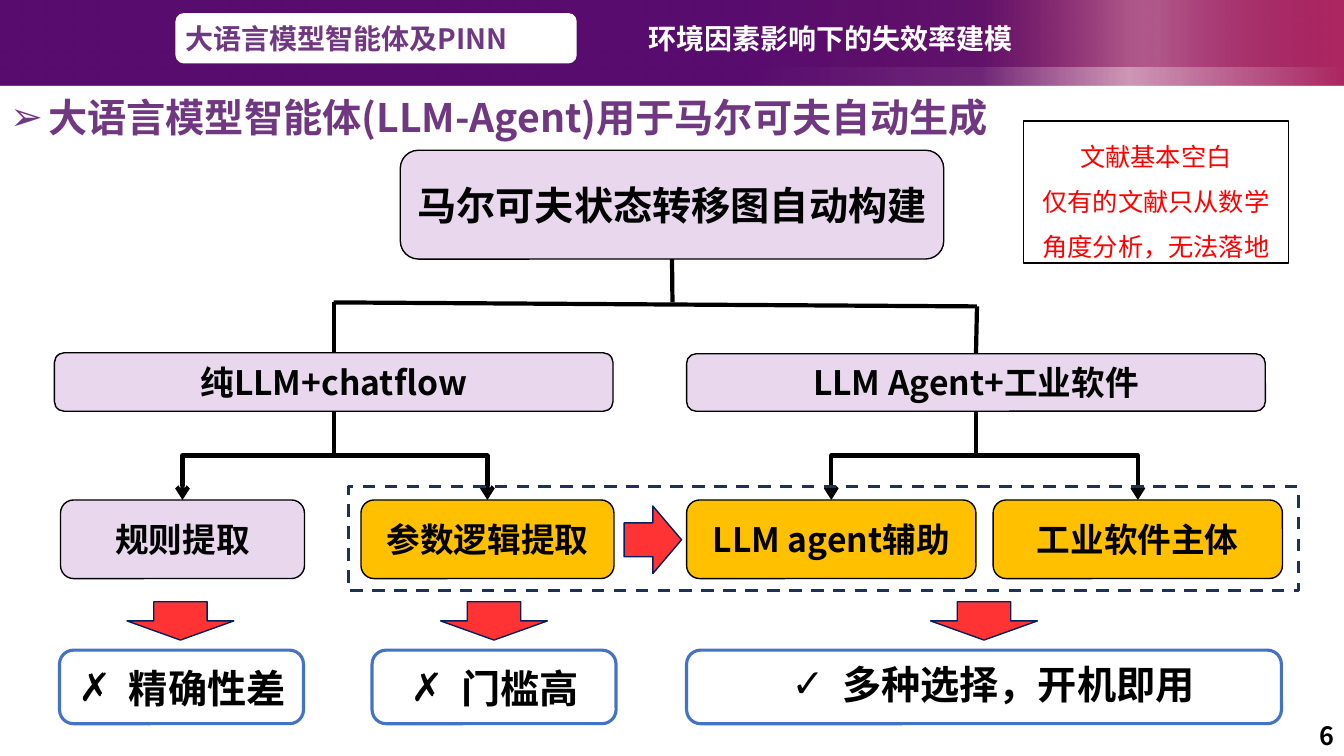
from lxml import etree
from pptx import Presentation, util as u
from pptx.dml.color import RGBColor
from pptx.enum import dml, shapes, text
from pptx.oxml.ns import qn

BLACK = RGBColor(0x00, 0x00, 0x00)
WHITE = RGBColor(0xFF, 0xFF, 0xFF)
RED = RGBColor(0xFF, 0x00, 0x00)
PURPLE = RGBColor(0x70, 0x38, 0x81)
LILAC = RGBColor(0xE8, 0xD7, 0xED)
AMBER = RGBColor(0xFF, 0xC0, 0x00)
BLUE = RGBColor(0x44, 0x72, 0xC4)
NAVY = RGBColor(0x00, 0x20, 0x60)
FRAME = RGBColor(0x1E, 0x32, 0x56)
PLUM = RGBColor(0x58, 0x0C, 0x6E)
MULBERRY = RGBColor(0x69, 0x22, 0x66)
GRAPE = RGBColor(0x61, 0x10, 0x6A)
WINE = RGBColor(0x95, 0x20, 0x64)
ROSE = RGBColor(0xAC, 0x27, 0x61)
CJK = "Noto Sans CJK SC"
KIND = shapes.MSO_SHAPE
ALIGN = text.PP_ALIGN
ANCHOR = text.MSO_ANCHOR

prs = Presentation()
prs.slide_width, prs.slide_height = u.Inches(13.33), u.Inches(7.5)
COL, ROW = prs.slide_width / 133.3, prs.slide_height / 75
slide = prs.slides.add_slide(prs.slide_layouts[5])


def block(parent, kind, at, fill=None, line=None, weight=1):
    x, y, w, h = at
    cells = [round(v) for v in (x * COL, y * ROW, w * COL, h * ROW)]
    if kind is None:
        return parent.add_textbox(*cells)
    s = parent.add_shape(kind, *cells)
    s.shadow.inherit = False
    if fill is None:
        s.fill.background()
    else:
        s.fill.solid()
        s.fill.fore_color.rgb = fill
    if line is None:
        s.line.fill.background()
    else:
        s.line.color.rgb = line
        s.line.width = u.Pt(weight)
    return s


def write(s, words, size, color=BLACK, align=ALIGN.CENTER, anchor=ANCHOR.TOP,
          font=CJK, bold=True, mark=None, indent=0.5, spacing=None):
    tf = s.text_frame
    frame_format = {"word_wrap": True, "vertical_anchor": anchor,
                    "auto_size": text.MSO_AUTO_SIZE.NONE}
    for name, value in frame_format.items():
        setattr(tf, name, value)
    for i, line in enumerate(words.split("\n")):
        p = tf.add_paragraph() if i else tf.paragraphs[0]
        p.alignment, p.line_spacing = align, spacing
        if mark:
            pPr = p._p.get_or_add_pPr()
            pPr.set("marL", str(u.Inches(indent)))
            pPr.set("indent", str(-u.Inches(indent)))
            etree.SubElement(pPr, qn("a:buFont")).set("typeface", "Arial")
            etree.SubElement(pPr, qn("a:buChar")).set("char", mark)
        r = p.add_run()
        r.text = line
        for name, value in {"size": u.Pt(size), "bold": bold, "name": font}.items():
            setattr(r.font, name, value)
        r.font.color.rgb = color
        etree.SubElement(r._r.get_or_add_rPr(), qn("a:ea")).set("typeface", CJK)


banners = [
    (6.6, [(0, PLUM, 100), (25, PLUM, 100), (49, PLUM, 100),
           (72, MULBERRY, 100), (86, WINE, 46), (100, ROSE, 100)]),
    (8.5, [(0, PLUM, 100), (35, PLUM, 100), (55, PLUM, 100),
           (73, GRAPE, 90), (84, WINE, 46), (100, ROSE, 100)]),
]
for height, stops in banners:
    s = block(slide.shapes, KIND.RECTANGLE, (0, 0, 133.3, height))
    s.fill.gradient()
    s.fill.gradient_angle = 0
    stop_list = s._element.spPr.find(".//" + qn("a:gsLst"))
    for old in list(stop_list):
        stop_list.remove(old)
    for position, color, opacity in stops:
        stop = etree.SubElement(stop_list, qn("a:gs"), pos=str(position * 1000))
        tint = etree.SubElement(stop, qn("a:srgbClr"), val=str(color))
        etree.SubElement(tint, qn("a:alpha"), val=str(opacity * 1000))

title = slide.shapes.title
place = {"left": 0, "top": 8.8 * ROW, "width": 113.9 * COL, "height": 5.7 * ROW}
for name, value in place.items():
    setattr(title, name, round(value))
write(title, "大语言模型智能体(LLM-Agent)用于马尔可夫自动生成", 28, PURPLE,
      ALIGN.LEFT, mark="➢", indent=0.38)

nodes = {}
for key, at, fill, words, size in [
    ("root", (39.7, 14.9, 53.9, 10.8), LILAC, "马尔可夫状态转移图自动构建", 28),
    ("chat", (5.4, 35, 55.4, 5.8), LILAC, "纯LLM+chatflow", 24),
    ("agent", (68.1, 35.1, 57.4, 5.7), LILAC, "LLM Agent+工业软件", 24),
    ("rules", (6, 49.6, 24.2, 7.8), LILAC, "规则提取", 24),
    ("logic", (35.8, 49.6, 25.1, 7.8), AMBER, "参数逻辑提取", 24),
    ("assist", (68.1, 49.6, 28.7, 7.8), AMBER, "LLM agent辅助", 24),
    ("core", (98.5, 49.6, 28.7, 7.8), AMBER, "工业软件主体", 24),
]:
    nodes[key] = block(slide.shapes, KIND.ROUNDED_RECTANGLE, at, fill, BLACK)
    write(nodes[key], words, size, anchor=ANCHOR.MIDDLE)

links = []
for start, end, source, target in [
    ((66.7, 25.7), (66.7, 30), "root", None),
    ((33.1, 30), (96.9, 30.4), None, None),
    ((33.1, 30), (33.2, 35), None, "chat"),
    ((96.9, 30.4), (96.8, 35.1), None, "agent"),
]:
    c = slide.shapes.add_connector(
        shapes.MSO_CONNECTOR.STRAIGHT, round(start[0] * COL), round(start[1] * ROW),
        round(end[0] * COL), round(end[1] * ROW))
    if source:
        c.begin_connect(nodes[source], 2)
    if target:
        c.end_connect(nodes[target], 0)
    links.append(c)

for source, target in [("chat", "rules"), ("chat", "logic"),
                       ("agent", "assist"), ("agent", "core")]:
    c = slide.shapes.add_connector(shapes.MSO_CONNECTOR.ELBOW, 0, 0, 1, 1)
    c.begin_connect(nodes[source], 2)
    c.end_connect(nodes[target], 0)
    x1, y1, x2, y2 = c.begin_x, c.begin_y, c.end_x, c.end_y
    drop, reach = y2 - y1, abs(x2 - x1)
    place = {"left": (x1 + x2 - drop) // 2, "top": (y1 + y2 - reach) // 2,
             "width": drop, "height": reach}
    for name, value in place.items():
        setattr(c, name, value)
    xfrm = c._element.spPr.find(qn("a:xfrm"))
    for flip in ("flipH", "flipV"):
        xfrm.attrib.pop(flip, None)
    xfrm.set("rot", str((90 if x2 < x1 else 270) * 60000))
    if x2 > x1:
        xfrm.set("flipH", "1")
    etree.SubElement(c.line._get_or_add_ln(), qn("a:tailEnd")).set("type", "arrow")
    links.append(c)

for c in links:
    c.line.color.rgb = BLACK
    c.line.width = u.Pt(3)
    etree.SubElement(c._element.spPr, qn("a:effectLst"))

for at, words_at, mark, words in [
    ((5.9, 64.5, 24.2, 7.3), (6.1, 65.4, 23.9, 5.7), "✗", "精确性差"),
    ((36.9, 64.5, 24.2, 7.3), (37.1, 65.4, 23.9, 5.7), "✗", "门槛高"),
    ((68.1, 64.5, 59, 7.3), (69, 65, 59, 5.7), "✓", "多种选择，开机即用"),
]:
    result = slide.shapes.add_group_shape().shapes
    s = block(result, KIND.ROUNDED_RECTANGLE, at, line=BLUE, weight=2.25)
    s.adjustments[0] = 0.19
    write(block(result, None, words_at), words, 28, font="Arial", mark=mark)

arrows = [(x, 59.7, 10.6, 3.8, 0) for x in (12.6, 43.7, 92.3)]
for *at, turn in arrows + [(61.4, 50.7, 6.7, 5.7, 270)]:
    s = block(slide.shapes, KIND.DOWN_ARROW, at, RED, NAVY)
    s.rotation = turn
    tint = s._element.spPr.find(qn("a:solidFill"))[0]
    etree.SubElement(tint, qn("a:alpha"), val="80000")

frame = block(slide.shapes, KIND.RECTANGLE, (34.6, 48.3, 94.2, 10.3),
              line=FRAME, weight=2.25)
frame.line.dash_style = dml.MSO_LINE.DASH

note = block(slide.shapes, KIND.RECTANGLE, (101.5, 12, 26.3, 14.1), line=BLACK)
write(note, "文献基本空白\n仅有的文献只从数学角度分析，无法落地", 18, RED,
      bold=False, spacing=1.5)

write(block(slide.shapes, None, (103.3, 71, 30, 4)), "6", 18, align=ALIGN.RIGHT)

block(slide.shapes, KIND.ROUNDED_RECTANGLE, (17.4, 1.3, 39.8, 5), WHITE)
for at, words, color in [
    ((17.4, 1.6, 39.8, 4.4), "大语言模型智能体及PINN", PURPLE),
    ((63.3, 1.6, 43.1, 4.4), "环境因素影响下的失效率建模", WHITE),
]:
    write(block(slide.shapes, None, at), words, 20, color, ALIGN.JUSTIFY)

prs.save("out.pptx")
